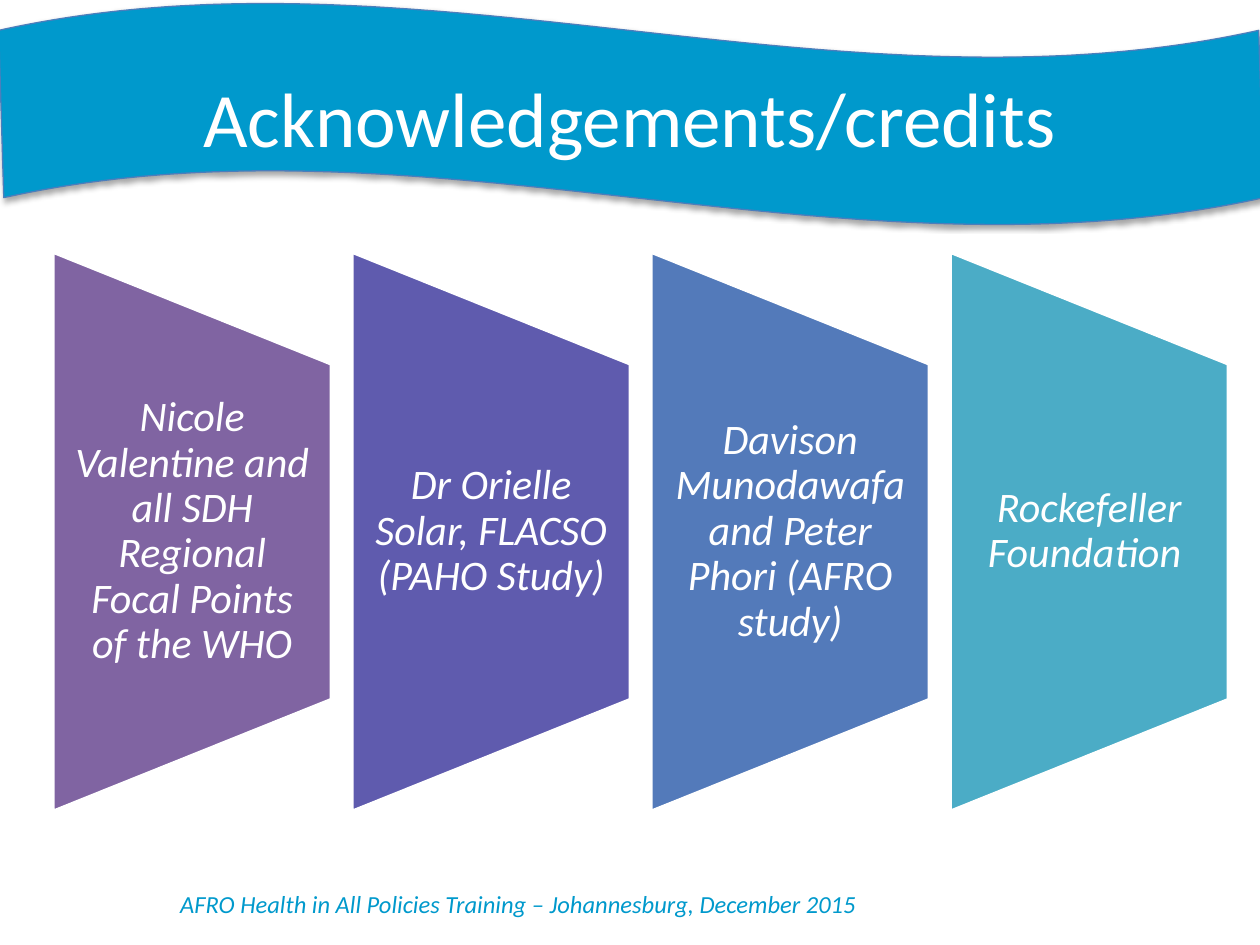
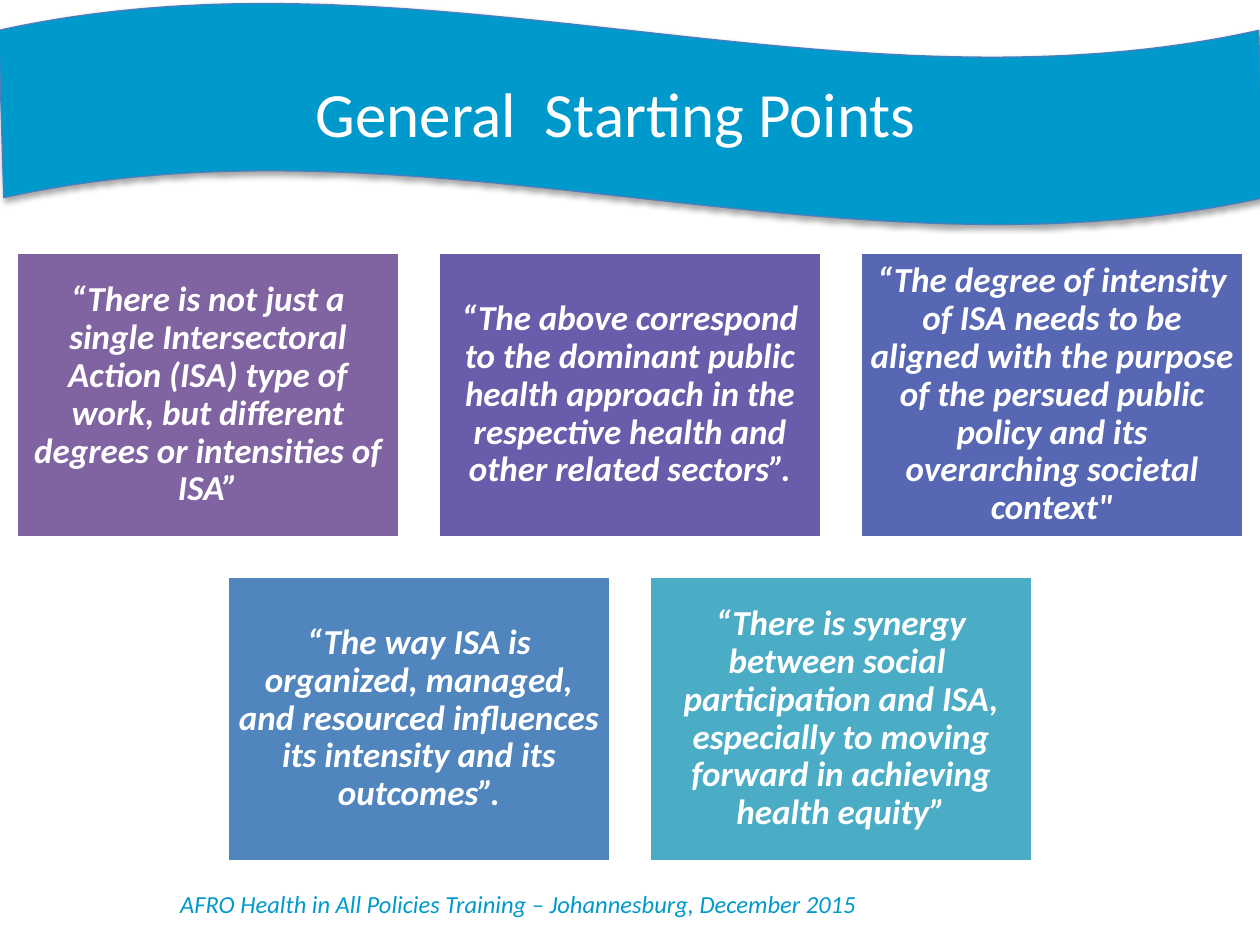
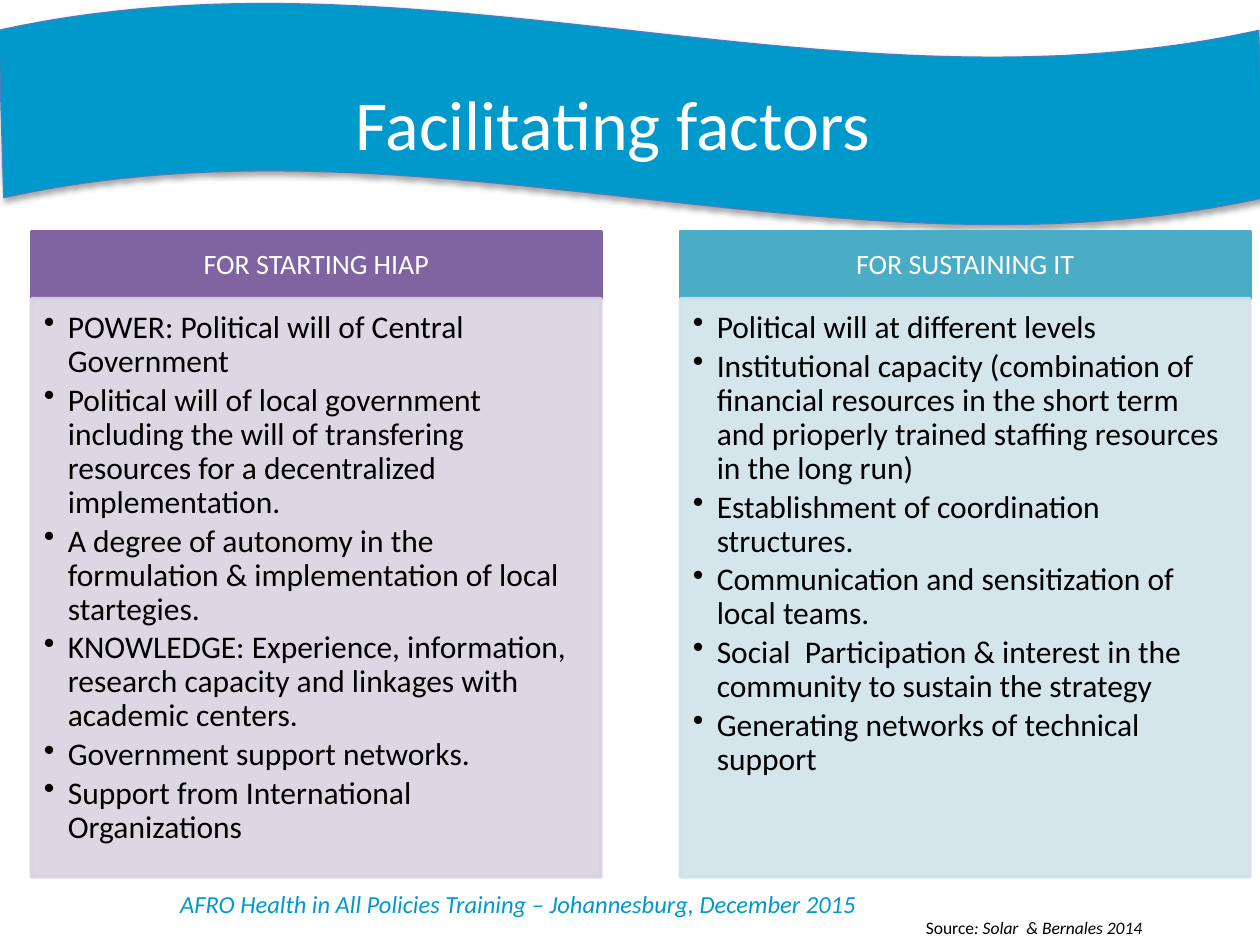
from dataclasses import dataclass

from lxml.etree import SubElement
from pptx import Presentation
from pptx.dml.color import RGBColor
from pptx.enum.shapes import MSO_SHAPE
from pptx.enum.text import MSO_ANCHOR, MSO_AUTO_SIZE, PP_ALIGN
from pptx.oxml.ns import qn
from pptx.util import Inches, Pt


@dataclass(frozen=True)
class Theme:
    font: str = "Calibri"
    white: str = "FFFFFF"
    black: str = "000000"
    band: str = "0099CC"
    band_edge: str = "4B7EBC"
    purple: str = "8064A2"
    teal: str = "4BACC6"
    credit_size: int = 24
    quote_size: int = 20
    heading_size: int = 16
    factor_size: int = 18
    footer_size: int = 14
    source_size: int = 10


THEME = Theme()
SLIDE_W, SLIDE_H = 10, 7.5
TITLE_ONLY = 5

FOOTER = "AFRO Health in All Policies Training – Johannesburg, December 2015"

CREDITS_TITLE = "Acknowledgements/credits"
CREDITS = [
    ("Nicole Valentine and all SDH Regional Focal Points of the WHO", THEME.purple),
    ("Dr Orielle Solar, FLACSO (PAHO Study)", "5F5BAE"),
    ("Davison Munodawafa and Peter Phori (AFRO study)", "537ABA"),
    ("Rockefeller Foundation ", THEME.teal),
]

STARTING_TITLE = "General  Starting Points  "
QUOTE_ROWS = [
    [
        ("“There is not just a single Intersectoral Action (ISA) type of work, "
         "but different degrees or intensities of ISA”", THEME.purple),
        ("“The above correspond to the dominant public health approach in the "
         "respective health and other related sectors”.", "685DAB"),
        ("“The degree of intensity of ISA needs to be aligned with the purpose of the "
         "persued public policy and its overarching societal context\"", "5767B4"),
    ],
    [
        ("“The way ISA is organized, managed, and resourced influences its "
         "intensity and its outcomes”.", "5185BD"),
        ("“There is synergy between social  participation and ISA, especially to "
         "moving forward in achieving health equity”", THEME.teal),
    ],
]

FACTORS_TITLE = "Facilitating factors"
FACTOR_COLUMNS = [
    {
        "heading": "FOR STARTING HIAP", "colour": THEME.purple, "tint": "D8D3E0",
        "factors": [
            "POWER: Political will of Central Government",
            "Political will of local government including the will of transfering "
            "resources for a decentralized implementation.",
            "A degree of autonomy in the formulation & implementation of local startegies.",
            "KNOWLEDGE: Experience, information, research capacity and linkages with "
            "academic centers.",
            "Government support networks.",
            "Support from International Organizations",
        ],
    },
    {
        "heading": "FOR SUSTAINING IT", "colour": THEME.teal, "tint": "D0E3EA",
        "factors": [
            "Political will at different levels",
            "Institutional capacity (combination of financial resources in the short term "
            "and prioperly trained staffing resources in the long run)",
            "Establishment of coordination structures.",
            "Communication and sensitization of local teams.",
            "Social  Participation & interest in the community to sustain the strategy",
            "Generating networks of technical support",
        ],
    },
]
SOURCE_LABEL, SOURCE_WORK = "Source", ": Solar  & Bernales 2014"


def inches(box):
    return [Inches(length) for length in box]


def write(shape, lines, size, colour, align=PP_ALIGN.CENTER, anchor=MSO_ANCHOR.MIDDLE,
          insets=(0.1, 0.05, 0.1, 0.05), spacing=None, bold=False, italic=False):
    """Set one paragraph per line, then format the frame and its runs."""
    frame = shape.text_frame
    frame.text = "\n".join(lines)
    frame.word_wrap = True
    frame.auto_size = MSO_AUTO_SIZE.NONE
    frame.vertical_anchor = anchor
    (frame.margin_left, frame.margin_top,
     frame.margin_right, frame.margin_bottom) = inches(insets)
    for paragraph in frame.paragraphs:
        paragraph.alignment = align
        paragraph.line_spacing = spacing
        for run in paragraph.runs:
            font = run.font
            font.name, font.size = THEME.font, Pt(size)
            font.bold, font.italic = bold, italic
            font.color.rgb = RGBColor.from_string(colour)
    return frame


def add_block(slide, preset, box, fill, edge=THEME.white, edge_width=2):
    block = slide.shapes.add_shape(preset, *inches(box))
    block.shadow.inherit = False
    block.fill.solid()
    block.fill.fore_color.rgb = RGBColor.from_string(fill)
    block.line.color.rgb = RGBColor.from_string(edge)
    block.line.width = Pt(edge_width)
    return block


def set_opacity(parent, percent):
    for colour in list(parent.iter(qn("a:srgbClr"))):
        SubElement(colour, qn("a:alpha"), val=str(percent * 1000))


def add_bullets(frame, indent, space_after):
    for paragraph in frame.paragraphs:
        paragraph.space_after = Pt(space_after)
        properties = paragraph._p.get_or_add_pPr()
        properties.set("marL", str(Inches(indent)))
        properties.set("indent", str(-Inches(indent)))
        SubElement(properties, qn("a:buChar"), char="•")


def add_titled_slide(deck, title, size, box, align=PP_ALIGN.CENTER):
    slide = deck.slides.add_slide(deck.slide_layouts[TITLE_ONLY])
    heading = slide.shapes.title
    heading.left, heading.top, heading.width, heading.height = inches(box)
    write(heading, [title], size, THEME.white, align)
    return slide


def decorate_layout(slide):
    """Draw the footer and wave band, then move them behind the layout's placeholders."""
    footer = slide.shapes.add_textbox(*inches((0.08, 7, 8.07, 0.34)))
    write(footer, [FOOTER], THEME.footer_size, THEME.band, italic=True)
    band = add_block(slide, MSO_SHAPE.WAVE, (-0.01, 0.02, 10.04, 1.77),
                     THEME.band, THEME.band_edge, 0.75)
    band.adjustments[0], band.adjustments[1] = 0.125, 0.002
    effects = band.element.spPr.find(qn("a:effectLst"))
    shadow = SubElement(effects, qn("a:outerShdw"), blurRad=str(Pt(3.1)),
                        dist=str(Pt(1.8)), dir="5400000", rotWithShape="0")
    SubElement(shadow, qn("a:srgbClr"), val=THEME.black)
    set_opacity(shadow, 35)
    tree = slide.slide_layout.shapes.element
    for position, part in enumerate((footer, band)):
        part.element.xpath(".//p:cNvPr")[0].set("id", str(100 + position))
        tree.insert(2 + position, part.element)


def add_credits(slide):
    left, right, width = 0.42, 9.75, 2.21
    middle, panel_height, text_height = 4.22, 4.44, 2.67
    pitch = (right - left - width) / (len(CREDITS) - 1)
    for column, (credit, colour) in enumerate(CREDITS):
        x = left + column * pitch
        # A quarter turn swaps the panel's sides around its centre.
        panel = add_block(slide, MSO_SHAPE.FLOWCHART_MANUAL_OPERATION,
                          (x + (width - panel_height) / 2, middle - width / 2,
                           panel_height, width), colour)
        panel.rotation = 270
        caption = slide.shapes.add_textbox(
            *inches((x, middle - text_height / 2, width, text_height)))
        write(caption, [credit], THEME.credit_size, THEME.white,
              insets=(0.17, 0, 0.17, 0), spacing=0.9, italic=True)


def add_quotes(slide):
    width, height, gap, top = 3.05, 2.27, 0.3, 2
    for row, quotes in enumerate(QUOTE_ROWS):
        left = (SLIDE_W - len(quotes) * (width + gap) + gap) / 2
        for column, (quote, colour) in enumerate(quotes):
            card = add_block(slide, MSO_SHAPE.RECTANGLE,
                             (left + column * (width + gap), top + row * (height + gap),
                              width, height), colour)
            write(card, [quote], THEME.quote_size, THEME.white, insets=(0.08,) * 4,
                  spacing=0.9, bold=True, italic=True)


def add_factors(slide):
    left, pitch, width = 0.25, 5.15, 4.52
    top, heading_height, list_height = 1.84, 0.53, 4.59
    for column, group in enumerate(FACTOR_COLUMNS):
        x = left + column * pitch
        heading = add_block(slide, MSO_SHAPE.RECTANGLE, (x, top, width, heading_height),
                            group["colour"], group["colour"])
        write(heading, [group["heading"]], THEME.heading_size, THEME.white,
              insets=(0.12, 0.07, 0.12, 0.07), spacing=0.9)
        factors = add_block(slide, MSO_SHAPE.RECTANGLE,
                            (x, top + heading_height, width, list_height),
                            group["tint"], group["tint"])
        set_opacity(factors.element.spPr, 90)
        frame = write(factors, group["factors"], THEME.factor_size, THEME.black,
                      PP_ALIGN.LEFT, MSO_ANCHOR.TOP, (0.1, 0.1, 0.14, 0.16), 0.9)
        add_bullets(frame, 0.19, 0.15 * THEME.factor_size)


def add_source(slide):
    source = slide.shapes.add_textbox(*inches((7.25, 7.23, 2.75, 0.27)))
    frame = write(source, [SOURCE_LABEL], THEME.source_size, THEME.black, PP_ALIGN.LEFT)
    work = frame.paragraphs[0].add_run()
    work.text = SOURCE_WORK
    work.font.name, work.font.size = THEME.font, Pt(THEME.source_size)
    work.font.italic = True
    work.font.color.rgb = RGBColor.from_string(THEME.black)


def main():
    deck = Presentation()
    deck.slide_width, deck.slide_height = Inches(SLIDE_W), Inches(SLIDE_H)

    credits_slide = add_titled_slide(deck, CREDITS_TITLE, 44, (0.5, 0.3, 9, 1.25))
    decorate_layout(credits_slide)
    add_credits(credits_slide)

    starting_slide = add_titled_slide(deck, STARTING_TITLE, 36, (0.5, 0.5, 9, 0.78))
    add_quotes(starting_slide)

    factors_slide = add_titled_slide(deck, FACTORS_TITLE, 40, (2.72, 0.59, 4.45, 0.77),
                                     PP_ALIGN.LEFT)
    add_source(factors_slide)
    add_factors(factors_slide)

    deck.save("out.pptx")


if __name__ == "__main__":
    main()
